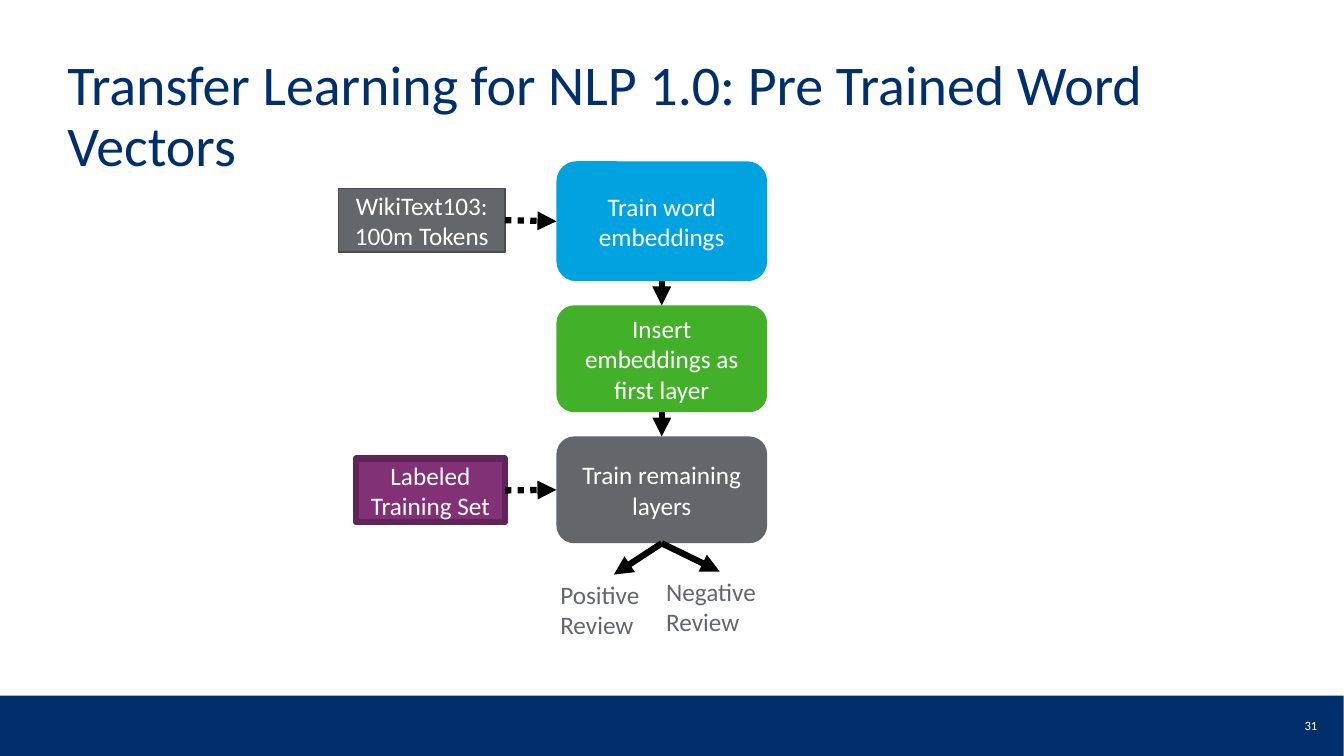
from lxml import etree
from pptx import Presentation
from pptx import util as u
from pptx.dml.color import RGBColor
from pptx.enum import dml, shapes, text
from pptx.oxml import ns

PX = 9144  # EMU per px, 100 px to the inch
FONT = "Calibri"
NAVY, GREY, WHITE, BLACK = "002F6C", "63666A", "FFFFFF", "000000"
TOP, LEFT, BOTTOM, RIGHT = range(4)
CENTER = text.PP_ALIGN.CENTER


def px(*lengths):
    return [u.Emu(length * PX) for length in lengths]


def color(hex_string):
    return RGBColor.from_string(hex_string)


def write(shape, lines, size, hex_string, align=None, spacing=None):
    frame = shape.text_frame
    frame.word_wrap = True
    for index, line in enumerate(lines):
        para = frame.add_paragraph() if index else frame.paragraphs[0]
        para.alignment = align
        para.line_spacing = spacing
        span = para.add_run()
        span.text = line
        span.font.name = FONT
        span.font.size = u.Pt(size)
        span.font.color.rgb = color(hex_string)


def add_text(page, place, line, size, hex_string, align=None, spacing=None):
    box = page.shapes.add_textbox(*px(*place))
    write(box, [line], size, hex_string, align, spacing)


def add_box(page, kind, place, fill, lines=(), border=None):
    """Add a filled shape with centred white text; border is (colour, points)."""
    box = page.shapes.add_shape(kind, *px(*place))
    box.shadow.inherit = False
    box.fill.solid()
    box.fill.fore_color.rgb = color(fill)
    if border:
        box.line.color.rgb = color(border[0])
        box.line.width = u.Pt(border[1])
    else:
        box.line.fill.background()
    box.text_frame.vertical_anchor = text.MSO_ANCHOR.MIDDLE
    write(box, lines, 18, WHITE, CENTER)
    return box


def add_arrow(page, source, side, target=None, end=(0, 0), dotted=False):
    """Lead from a side of source to the facing side of target, or to a point."""
    arrow = page.shapes.add_connector(
        shapes.MSO_CONNECTOR.STRAIGHT, 0, 0, *px(*end))
    arrow.begin_connect(source, side)
    if target is not None:
        arrow.end_connect(target, (side + 2) % 4)
    arrow.line.color.rgb = color(BLACK)
    arrow.line.width = u.Pt(4.5)
    if dotted:
        arrow.line.dash_style = dml.MSO_LINE.ROUND_DOT
    head = etree.SubElement(arrow.line._get_or_add_ln(), ns.qn("a:tailEnd"))
    head.set("type", "triangle")
    etree.SubElement(arrow._element.spPr, ns.qn("a:effectLst"))


def main():
    deck = Presentation()
    deck.slide_width, deck.slide_height = u.Inches(13.333), u.Inches(7.5)
    page = deck.slides.add_slide(deck.slide_layouts[6])
    rect = shapes.MSO_SHAPE.RECTANGLE
    rounded = shapes.MSO_SHAPE.ROUNDED_RECTANGLE

    add_box(page, rect, (0, 690, 1333, 62), NAVY)
    add_text(page, (1267, 707, 67, 25), "31", 9, WHITE, CENTER)
    add_text(page, (57, 52, 1150, 145),
             "Transfer Learning for NLP 1.0: Pre Trained Word Vectors",
             40, NAVY, spacing=0.9)

    steps = [
        add_box(page, rounded, (552, top, 209, height), fill, [label])
        for top, height, fill, label in (
            (160, 119, "00A3E0", "Train word embeddings"),
            (303, 106, "43B02A", "Insert embeddings as first layer"),
            (433, 106, GREY, "Train remaining layers"),
        )
    ]
    corpus = add_box(page, rect, (336, 187, 165, 63), GREY,
                     ["WikiText103:", "100m Tokens"], ("494B4E", 1))
    labeled_set = add_box(page, rect, (353, 455, 148, 63), "833177",
                          ["Labeled Training Set"], ("612458", 4.5))

    for upper, lower in zip(steps, steps[1:]):
        add_arrow(page, upper, BOTTOM, lower)
    for data, step in ((corpus, steps[0]), (labeled_set, steps[-1])):
        add_arrow(page, data, RIGHT, step, dotted=True)

    for label, left, top, tip in (
        ("Positive Review", 546, 570, (609, 570)),
        ("Negative Review", 651, 567, (714, 567)),
    ):
        add_text(page, (left, top, 125, 71), label, 18, GREY)
        add_arrow(page, steps[-1], BOTTOM, end=tip)

    deck.save("out.pptx")


if __name__ == "__main__":
    main()
